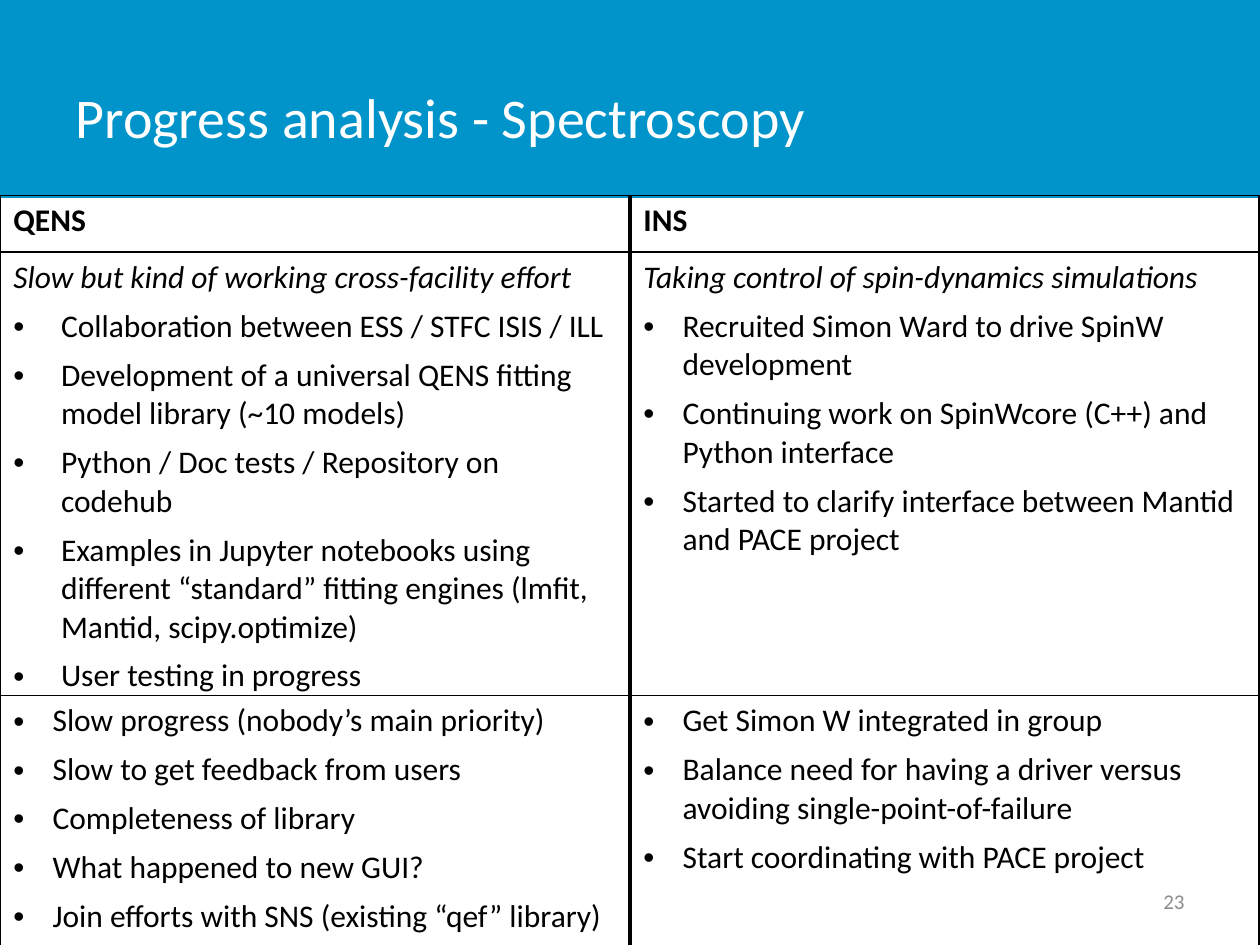
from dataclasses import dataclass

from lxml.etree import SubElement
from pptx import Presentation
from pptx.dml.color import RGBColor
from pptx.enum.shapes import MSO_SHAPE
from pptx.enum.text import MSO_ANCHOR, PP_ALIGN
from pptx.oxml.ns import qn
from pptx.util import Cm, Pt

WIDE, HIGH = 25.4, 19.05
BAND = 3.99
TOP = 3.94
ROWS = (1.14, 8.84, 5.13)
BLUE, WHITE, BLACK, GREY = "0094CA", "FFFFFF", "000000", "8C8C8C"
THIN, THICK = 1, 2.25


@dataclass
class Block:
    """One table cell: an optional lead line, then bullets."""
    lead: str = ""
    items: tuple[str, ...] = ()
    bold: bool = False
    indent: float = 0.79
    last: int = 0  # outline level of the final bullet


GRID = (
    (Block("QENS", bold=True), Block("INS", bold=True)),
    (
        Block("Slow but kind of working cross-facility effort", (
            "Collaboration between ESS / STFC ISIS / ILL",
            "Development of a universal QENS fitting model library (~10 models)",
            "Python / Doc tests / Repository on codehub",
            "Examples in Jupyter notebooks using different “standard” "
            "fitting engines (lmfit, Mantid, scipy.optimize)",
            "User testing in progress",
        ), indent=0.96),
        Block("Taking control of spin-dynamics simulations", (
            "Recruited Simon Ward to drive SpinW development",
            "Continuing work on SpinWcore (C++) and Python interface",
            "Started to clarify interface between Mantid and PACE project",
        )),
    ),
    (
        Block(items=(
            "Slow progress (nobody’s main priority)",
            "Slow to get feedback from users",
            "Completeness of library",
            "What happened to new GUI?",
            "Join efforts with SNS (existing “qef” library)",
        ), last=2),
        Block(items=(
            "Get Simon W integrated in group",
            "Balance need for having a driver versus avoiding "
            "single-point-of-failure",
            "Start coordinating with PACE project",
        )),
    ),
)


def color(code: str) -> RGBColor:
    return RGBColor.from_string(code)


def write(para, text: str, *, size: float = 18, tint: str = BLACK,
          bold: bool = False, italic: bool = False,
          align=PP_ALIGN.LEFT, after: float = 0, indent: float = 0) -> None:
    """Fill a paragraph; a non-zero indent makes it a bullet."""
    if indent:
        props = para._p.get_or_add_pPr()
        props.set("marL", str(Cm(indent)))
        props.set("indent", str(-Cm(indent)))
        SubElement(props, qn("a:buFont")).set("typeface", "Arial")
        SubElement(props, qn("a:buChar")).set("char", "•")
    para.alignment = align
    para.space_after = Pt(after)
    run = para.add_run()
    run.text = text
    font = run.font
    font.name, font.size = "Calibri", Pt(size)
    font.bold, font.italic = bold, italic
    font.color.rgb = color(tint)


def edge(cell, side: str, width: float) -> None:
    line = SubElement(cell._tc.get_or_add_tcPr(), qn(f"a:ln{side}"))
    line.set("w", str(Pt(width)))
    fill = SubElement(line, qn("a:solidFill"))
    SubElement(fill, qn("a:srgbClr")).set("val", BLACK)


def fill_cell(cell, block: Block, left: float) -> None:
    cell.margin_left = cell.margin_right = Cm(0.27)
    cell.margin_top = cell.margin_bottom = Cm(0.13)
    for side, width in zip("LRTB", (left, THICK, THIN, THIN)):
        edge(cell, side, width)
    cell.fill.background()
    frame = cell.text_frame
    lines = [(block.lead, 0)] if block.lead else []
    lines += [(item, block.indent) for item in block.items]
    for num, (text, indent) in enumerate(lines):
        para = frame.add_paragraph() if num else frame.paragraphs[0]
        write(para, text, bold=block.bold, indent=indent,
              italic=not (indent or block.bold),
              after=0 if block.last and num == len(lines) - 1 else 6)
    para.level = block.last


def add_grid(slide) -> None:
    frame = slide.shapes.add_table(len(GRID), 2, 0, Cm(TOP), Cm(WIDE),
                                   Cm(sum(ROWS)))
    table = frame.table
    table.first_row = table.horz_banding = False
    for row, high in zip(table.rows, ROWS):
        row.height = Cm(high)
    for r, blocks in enumerate(GRID):
        for c, block in enumerate(blocks):
            fill_cell(table.cell(r, c), block, THICK if c else THIN)


def add_band(slide) -> None:
    band = slide.shapes.add_shape(MSO_SHAPE.RECTANGLE, 0, 0, Cm(WIDE), Cm(BAND))
    band.shadow.inherit = False
    band.fill.solid()
    band.fill.fore_color.rgb = color(BLUE)
    band.line.fill.background()
    # Behind the title placeholder
    slide.shapes._spTree.insert(2, band._element)


def add_title(slide) -> None:
    title = slide.shapes.title
    title.left, title.top = Cm(1.27), Cm(0.76)
    title.width, title.height = Cm(19.84), Cm(3.18)
    title.text_frame.vertical_anchor = MSO_ANCHOR.MIDDLE
    write(title.text_frame.paragraphs[0], "Progress analysis - Spectroscopy",
          size=32, tint=WHITE)


def add_number(slide) -> None:
    box = slide.shapes.add_textbox(Cm(18.21), Cm(17.65), Cm(5.92), Cm(1.02))
    frame = box.text_frame
    frame.word_wrap = True
    frame.vertical_anchor = MSO_ANCHOR.MIDDLE
    write(frame.paragraphs[0], "23", size=12, tint=GREY, align=PP_ALIGN.RIGHT)


def main() -> None:
    deck = Presentation()
    deck.slide_width, deck.slide_height = Cm(WIDE), Cm(HIGH)
    slide = deck.slides.add_slide(deck.slide_layouts[5])
    add_band(slide)
    add_title(slide)
    add_number(slide)
    add_grid(slide)
    deck.save("out.pptx")


if __name__ == "__main__":
    main()
